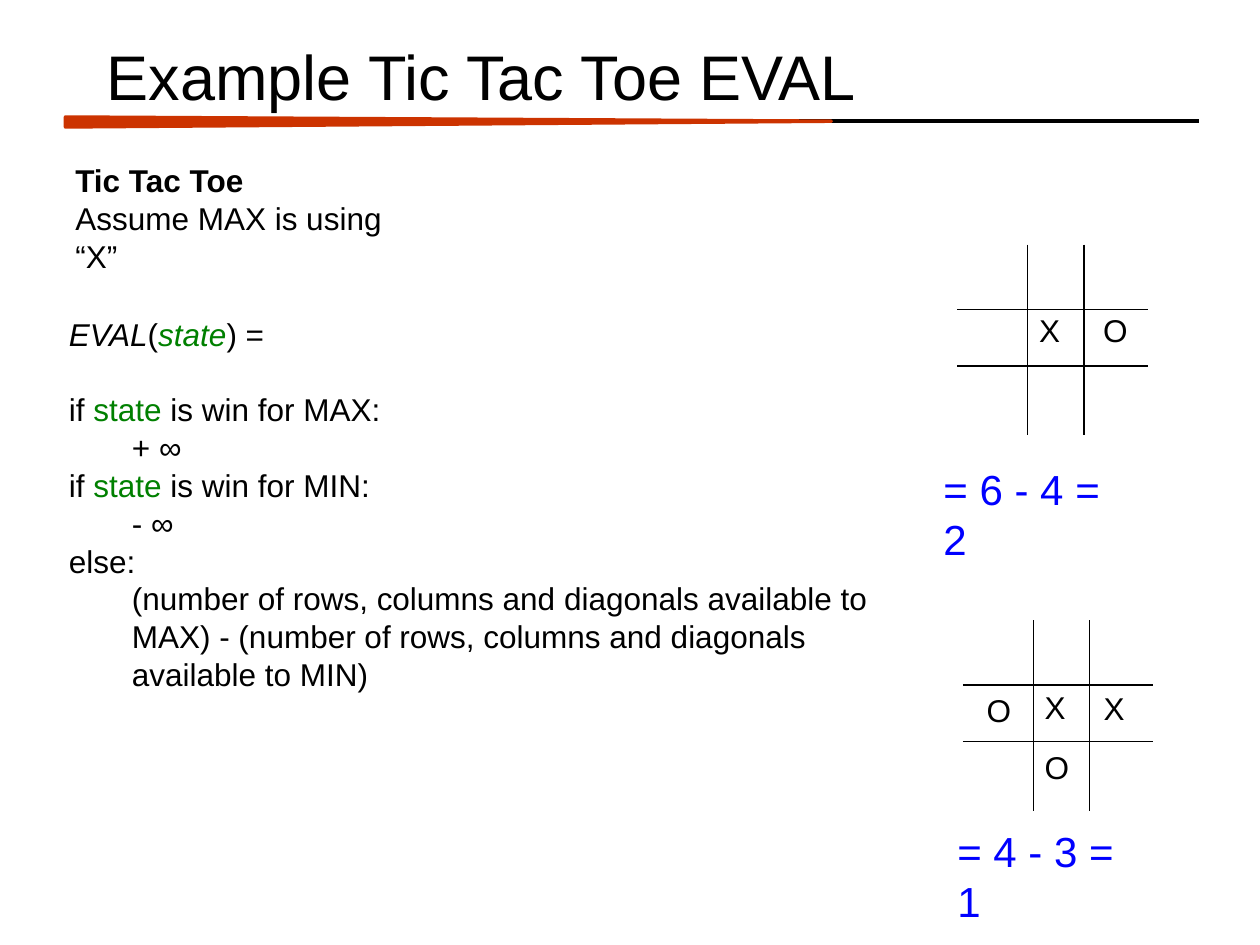
from pptx import Presentation
from pptx.dml.color import RGBColor
from pptx.enum.shapes import MSO_CONNECTOR, MSO_SHAPE
from pptx.enum.text import MSO_ANCHOR, PP_ALIGN
from pptx.oxml.ns import qn
from pptx.util import Cm, Pt
from lxml import etree

LINE = MSO_CONNECTOR.STRAIGHT
WEDGE = MSO_SHAPE.ISOSCELES_TRIANGLE
LEFT, TOP, MIDDLE = PP_ALIGN.LEFT, MSO_ANCHOR.TOP, MSO_ANCHOR.MIDDLE

FONT = "Arial"
COLORS = {"ink": "000000", "rust": "CC3300", "state": "008000", "score": "0000FF"}

# Content: a paragraph is a list of runs, a run is (text, style)
TITLE = "Example Tic Tac Toe EVAL"
INTRO = [
    [("Tic Tac Toe", {"bold": True})],
    [("Assume MAX is using “X”", {})],
]
GREEN = {"color": "state"}
RULES = [
    [("EVAL", {"italic": True}), ("(", {}),
     ("state", {"color": "state", "italic": True}), (") =", {})],
    [("if ", {}), ("state ", GREEN), ("is win for MAX:", {})],
    [("\t+ ∞", {})],
    [("if ", {}), ("state ", GREEN), ("is win for MIN:", {})],
    [("\t- ∞", {})],
    [("else:", {})],
    [("(number of rows, columns and diagonals available to MAX) - "
      "(number of rows, columns and diagonals available to MIN)", {})],
]
# Boards: corner, marks (letter and offset in cm), score and its place
BOARDS = [
    {"at": (19.3, 4.93), "marks": [("X", 1.4, 1.22), ("O", 2.69, 1.22)],
     "score": "= 6 - 4 = 2", "place": (18.77, 9.22)},
    {"at": (19.41, 12.5),
     "marks": [("X", 1.4, 1.24), ("O", 1.4, 2.46),
               ("X", 2.59, 1.27), ("O", 0.23, 1.3)],
     "score": "= 4 - 3 = 1", "place": (19.05, 16.51)},
]
SIDE, ROWS, COLS = 3.84, (1.31, 2.45), (1.42, 2.55)


def rgb(name):
    return RGBColor.from_string(COLORS[name])


def add_run(para, text, size, color="ink", bold=False, italic=False):
    run = para.add_run()
    run.text = text
    font = run.font
    font.name, font.size = FONT, Pt(size)
    font.bold, font.italic = bold, italic
    font.color.rgb = rgb(color)


def add_text(shapes, box, paras, size=18):
    frame = shapes.add_textbox(*map(Cm, box)).text_frame
    frame.word_wrap = True
    frame.vertical_anchor = TOP
    for i, runs in enumerate(paras):
        para = frame.add_paragraph() if i else frame.paragraphs[0]
        para.alignment = LEFT
        para.line_spacing = Pt(1.2 * size)
        for text, style in runs:
            add_run(para, text, size, **style)
    return frame.paragraphs


def add_line(shapes, ends, width):
    line = shapes.add_connector(LINE, *map(Cm, ends))
    line.line.color.rgb = rgb("ink")
    line.line.width = Pt(width)
    etree.SubElement(line._element.spPr, qn("a:effectLst"))


def add_board(shapes, board):
    group = shapes.add_group_shape().shapes
    x, y = board["at"]
    for row in ROWS:
        add_line(group, (x, y + row, x + SIDE, y + row), 0.75)
    for col in COLS:
        add_line(group, (x + col, y, x + col, y + SIDE), 0.75)
    for mark, dx, dy in board["marks"]:
        add_text(group, (x + dx, y + dy, 1.12, 1.27), [[(mark, {})]])
    add_text(shapes, (*board["place"], 4.27, 1.27),
             [[(board["score"], {"color": "score"})]], 24)


def main():
    deck = Presentation()
    deck.slide_width, deck.slide_height = Cm(25.4), Cm(19.05)
    slide = deck.slides.add_slide(deck.slide_layouts[5])
    shapes = slide.shapes

    # Title
    title = shapes.title
    title.left, title.top, title.width, title.height = map(
        Cm, (1.9, 0.48, 21.59, 2.06))
    title.text_frame.vertical_anchor = MIDDLE
    head = title.text_frame.paragraphs[0]
    head.alignment = LEFT
    add_run(head, TITLE, 36)

    # Rule under the title, with a tapering wedge
    add_line(shapes, (1.32, 2.44, 24.18, 2.44), 2)
    wedge = shapes.add_shape(WEDGE, *map(Cm, (8.94, -5.26, 0.2, 15.44)))
    wedge.rotation = 90
    wedge.adjustments[0] = 0.42
    wedge.shadow.inherit = False
    wedge.fill.solid()
    wedge.fill.fore_color.rgb = rgb("rust")
    wedge.line.color.rgb = rgb("rust")
    wedge.line.width = Pt(2)

    # Explanation
    add_text(shapes, (1.27, 3.12, 7.29, 1.8), INTRO)
    paras = add_text(shapes, (1.14, 6.22, 17.58, 7.19), RULES)
    paras[1].space_before = Pt(21.6)
    paras[-1].level = 1
    props = paras[-1]._p.get_or_add_pPr()
    props.set("marL", str(Cm(1.27)))
    props.set("indent", "0")

    # Boards with their scores
    for board in BOARDS:
        add_board(shapes, board)

    deck.save("out.pptx")


if __name__ == "__main__":
    main()
